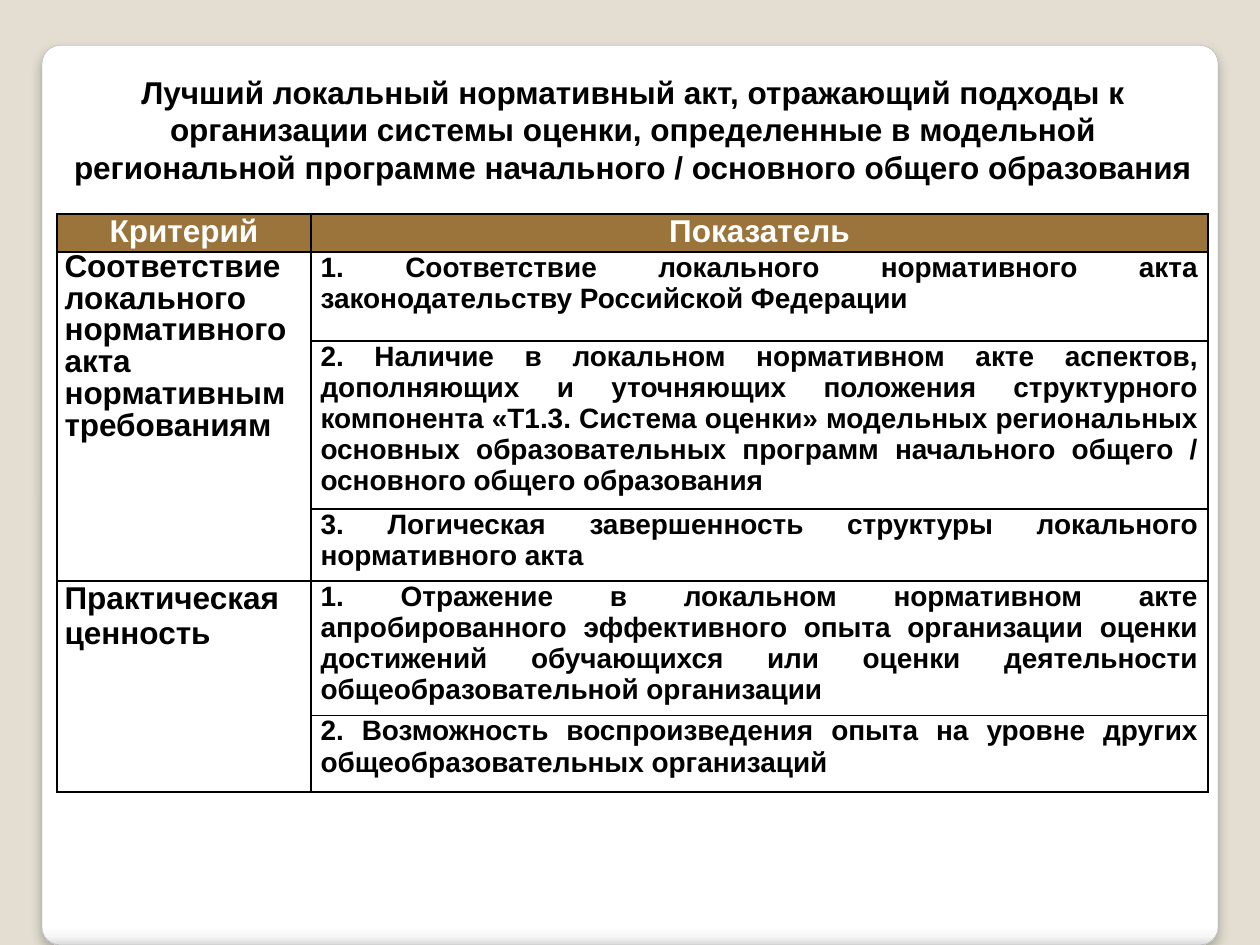
from dataclasses import dataclass

import pptx
import pptx.dml.color
import pptx.enum.dml
import pptx.enum.shapes
import pptx.enum.text
import pptx.oxml
import pptx.oxml.ns
import pptx.presentation
import pptx.slide
import pptx.table
import pptx.util

Pt = pptx.util.Pt
RGBColor = pptx.dml.color.RGBColor
Align = pptx.enum.text.PP_ALIGN
Anchor = pptx.enum.text.MSO_ANCHOR

BLACK = RGBColor(0x00, 0x00, 0x00)
WHITE = RGBColor(0xFF, 0xFF, 0xFF)
BROWN = RGBColor(0x9A, 0x74, 0x3A)
BEIGE = RGBColor(0xE3, 0xDE, 0xD1)
GREY = RGBColor(0xA4, 0xA4, 0xA4)
PANEL_STOPS = [
    (0, WHITE),
    (98, WHITE),
    (99, RGBColor(0xF7, 0xF7, 0xF7)),
    (100, RGBColor(0xDA, 0xDA, 0xDA)),
]

FONT = "Arial"
TITLE = (
    "Лучший локальный нормативный акт, отражающий подходы к организации системы оценки, "
    "определенные в модельной региональной программе начального / основного общего образования"
)
HEADINGS = ("Критерий", "Показатель")
COLUMN_WIDTHS = (145.2, 512.4)
HEADER_HEIGHT = 21.7


@dataclass
class Indicator:
    text: str
    height: float


@dataclass
class Criterion:
    name: str
    line_spacing: float
    indicators: list[Indicator]


CRITERIA = [
    Criterion("Соответствие локального нормативного акта нормативным требованиям", 0.9, [
        Indicator("1. Соответствие локального нормативного акта законодательству "
                  "Российской Федерации", 50.9),
        Indicator("2. Наличие в локальном нормативном акте аспектов, дополняющих и уточняющих "
                  "положения структурного компонента «Т1.3. Система оценки» модельных "
                  "региональных основных образовательных программ начального общего / "
                  "основного общего образования", 96),
        Indicator("3. Логическая завершенность структуры локального нормативного акта", 41.1),
    ]),
    Criterion("Практическая ценность", 1.0, [
        Indicator("1. Отражение в локальном нормативном акте апробированного эффективного опыта "
                  "организации оценки достижений обучающихся или оценки деятельности "
                  "общеобразовательной организации", 77.1),
        Indicator("2. Возможность воспроизведения опыта на уровне других "
                  "общеобразовательных организаций", 43.5),
    ]),
]


def xml(text: str):
    """Parse a DrawingML fragment written with the a: prefix."""
    return pptx.oxml.parse_xml(text.replace(">", f" {pptx.oxml.ns.nsdecls('a')}>", 1))


def format_paragraph(paragraph, size: float, color: RGBColor, alignment: Align) -> None:
    paragraph.alignment = alignment
    paragraph.font.name = FONT
    paragraph.font.size = Pt(size)
    paragraph.font.bold = True
    paragraph.font.color.rgb = color


def add_panel(slide: pptx.slide.Slide) -> None:
    """Rounded white panel with a shaded lower edge, behind the title."""
    panel = slide.shapes.add_shape(
        pptx.enum.shapes.MSO_SHAPE.ROUNDED_RECTANGLE, Pt(24), Pt(26), Pt(672), Pt(514))
    panel.adjustments[0] = 0.02
    panel.fill.background()
    panel.line.color.rgb = GREY
    panel.line.width = Pt(0.16)

    stops = "".join(f'<a:gs pos="{position * 1000}"><a:srgbClr val="{color}"/></a:gs>'
                    for position, color in PANEL_STOPS)
    gradient = xml(f'<a:gradFill><a:gsLst>{stops}</a:gsLst><a:lin ang="5400000"/></a:gradFill>')
    properties = panel.element.spPr
    properties.replace(properties.find(pptx.oxml.ns.qn("a:noFill")), gradient)
    properties.append(xml(
        f'<a:effectLst><a:outerShdw blurRad="{Pt(6)}" dist="{Pt(4)}" dir="5400000">'
        f'<a:srgbClr val="{BLACK}"><a:alpha val="25000"/></a:srgbClr>'
        '</a:outerShdw></a:effectLst>'))
    slide.shapes.title.element.addprevious(panel.element)


def fill_title(slide: pptx.slide.Slide) -> None:
    title = slide.shapes.title
    title.left, title.top, title.width, title.height = Pt(33), Pt(37.5), Pt(657.5), Pt(72.7)
    frame = title.text_frame
    frame.text = TITLE
    frame.word_wrap = True
    frame.vertical_anchor = Anchor.MIDDLE
    format_paragraph(frame.paragraphs[0], 18, BLACK, Align.CENTER)


def style_cell(cell: pptx.table._Cell, fill: RGBColor, side_margin: float) -> None:
    cell.margin_left = cell.margin_right = Pt(side_margin)
    cell.margin_top = cell.margin_bottom = 0
    cell.vertical_anchor = Anchor.TOP
    properties = cell._tc.get_or_add_tcPr()
    for side in "LRTB":
        properties.append(xml(
            f'<a:ln{side} w="{Pt(1)}"><a:solidFill><a:srgbClr val="{BLACK}"/></a:solidFill>'
            f'</a:ln{side}>'))
    cell.fill.solid()
    cell.fill.fore_color.rgb = fill


def write_cell(cell: pptx.table._Cell, text: str, size: float, color: RGBColor,
               alignment: Align, line_spacing: float = 1.0) -> None:
    cell.text = text
    paragraph = cell.text_frame.paragraphs[0]
    format_paragraph(paragraph, size, color, alignment)
    paragraph.line_spacing = line_spacing


def add_criteria_table(slide: pptx.slide.Slide) -> None:
    heights = [HEADER_HEIGHT] + [indicator.height for criterion in CRITERIA
                                 for indicator in criterion.indicators]
    table = slide.shapes.add_table(
        len(heights), len(COLUMN_WIDTHS), Pt(32.6), Pt(122.3),
        Pt(sum(COLUMN_WIDTHS)), Pt(sum(heights))).table
    table.first_row = table.horz_banding = False
    for column, width in zip(table.columns, COLUMN_WIDTHS):
        column.width = Pt(width)
    for index, height in enumerate(heights):
        table.rows[index].height = Pt(height)
        for column in range(len(COLUMN_WIDTHS)):
            in_header = index == 0
            style_cell(table.cell(index, column), BROWN if in_header else WHITE,
                       4.3 if in_header or column == 0 else 5.4)

    # Header row
    for column, heading in enumerate(HEADINGS):
        write_cell(table.cell(0, column), heading, 18, WHITE, Align.CENTER)

    # Each criterion spans the rows of its indicators
    row = 1
    for criterion in CRITERIA:
        last_row = row + len(criterion.indicators) - 1
        table.cell(row, 0).merge(table.cell(last_row, 0))
        write_cell(table.cell(row, 0), criterion.name, 18, BLACK, Align.LEFT,
                   criterion.line_spacing)
        for offset, indicator in enumerate(criterion.indicators):
            write_cell(table.cell(row + offset, 1), indicator.text, 16, BLACK, Align.JUSTIFY)
        row = last_row + 1


def main() -> None:
    presentation = pptx.Presentation()
    presentation.slide_width, presentation.slide_height = Pt(720), Pt(540)
    title_only = presentation.slide_layouts[5]
    slide = presentation.slides.add_slide(title_only)
    slide.background.fill.solid()
    slide.background.fill.fore_color.rgb = BEIGE
    add_panel(slide)
    fill_title(slide)
    add_criteria_table(slide)
    presentation.save("out.pptx")


if __name__ == "__main__":
    main()
